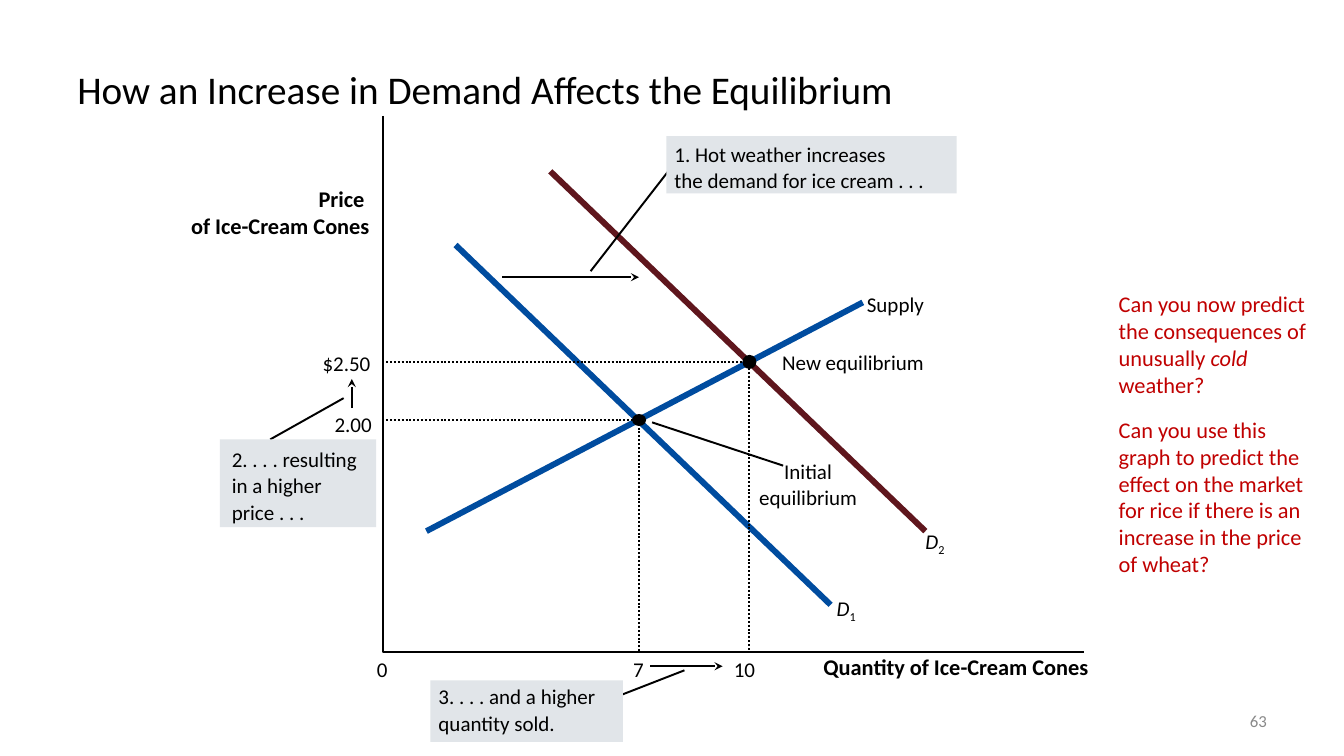
from dataclasses import dataclass

import pptx
import pptx.dml.color
import pptx.enum.dml
import pptx.enum.shapes
import pptx.enum.text
import pptx.oxml.ns
import pptx.util
from lxml import etree

Pt = pptx.util.Pt
ALIGN = pptx.enum.text.PP_ALIGN
ANCHOR = pptx.enum.text.MSO_ANCHOR
AUTO_SIZE = pptx.enum.text.MSO_AUTO_SIZE
SHAPE = pptx.enum.shapes.MSO_SHAPE
Point = tuple[float, float]

COLORS = {
    "ink": "000000",
    "blue": "004C9F",
    "maroon": "5F161D",
    "callout": "E1E5E9",
    "question": "C00000",
    "number": "898989",
}
FONT = "Calibri"
THIN, THICK = 1.38, 4.25
LINE_PITCH = 18.7
AXIS_X, AXIS_Y = 273.6, 465.8
GUIDE_X = 275.8


@dataclass(frozen=True)
class Segment:
    start: Point
    end: Point
    color: str = "ink"
    width: float = THIN
    arrow: bool = False


@dataclass(frozen=True)
class Callout:
    text: str
    left: float
    top: float
    width: float
    height: float
    inset_left: float
    inset_top: float


@dataclass(frozen=True)
class Equilibrium:
    x: float
    y: float
    dot_height: float


@dataclass(frozen=True)
class Label:
    text: str
    left: float
    top: float
    width: float
    height: float = 18
    size: float = 15
    bold: bool = False
    italic: bool = False
    align: ALIGN = ALIGN.LEFT
    color: str = "ink"
    subscript: str = ""


ARROWS = [
    Segment((358.6, 198), (456.5, 198), arrow=True),
    Segment((464.4, 475.9), (516.2, 475.9), arrow=True),
    Segment((251.3, 291.6), (251.3, 270.7), arrow=True),
]
CURVES = [
    Segment((616.3, 216), (304.6, 379.4), "blue", THICK),
    Segment((325.4, 175), (593.3, 432), "blue", THICK),
    Segment((393.1, 122.4), (661, 379.4), "maroon", THICK),
]
LEADERS = [
    Segment((465.8, 301.7), (559.4, 332.6)),
    Segment((488.9, 478.8), (433.4, 500.4)),
    Segment((193, 313.9), (245.5, 284.4)),
    Segment((421.9, 193.7), (487.4, 109.4)),
]
CALLOUTS = [
    Callout("1. Hot weather increases\vthe demand for ice cream . . .",
            475.9, 97.2, 207.4, 41, 5.8, 3.2),
    Callout("2. . . . resulting\vin a higher\vprice . . .",
            157, 313.9, 111.6, 62.6, 8.6, 4.5),
    Callout("3. . . . and a higher\vquantity sold.",
            307.4, 486, 137.5, 43.9, 5.8, 1.8),
]
EQUILIBRIA = [Equilibrium(456.5, 300, 8.6), Equilibrium(535.3, 258.5, 10)]
LABELS = [
    Label("0", 269.3, 468.7, 8),
    Label("7", 452.2, 468.7, 8),
    Label("10", 524.2, 468.7, 16),
    Label("2.00", 239, 293.8, 27),
    Label("$2.50", 230.4, 250.6, 35),
    Label("Supply", 619.2, 208.1, 42),
    Label("New equilibrium", 558.7, 249.8, 103),
    Label("Initial\vequilibrium", 541.7, 326.9, 71, 37.4, align=ALIGN.CENTER),
    Label("D", 597.6, 425.5, 16, italic=True, subscript="1"),
    Label("D", 661, 377.3, 16, italic=True, subscript="2"),
    Label("Price \vof Ice-Cream Cones", 134.6, 132.4, 129.4, 38.9, 16, True,
          align=ALIGN.RIGHT),
    Label("Quantity of Ice-Cream Cones", 588.2, 466.6, 192.2, 19.4, 16, True),
    Label("63", 688.3, 507.6, 216.7, 14.4, 12, align=ALIGN.RIGHT, color="number"),
]
QUESTIONS = [
    [("Can you now predict the consequences of unusually ", False),
     ("cold", True), (" weather?", False)],
    [("Can you use this graph to predict the effect on the market for rice "
      "if there is an increase in the price of wheat?", False)],
]


def rgb(name: str) -> pptx.dml.color.RGBColor:
    return pptx.dml.color.RGBColor.from_string(COLORS[name])


def apply(target, **values) -> None:
    for name, value in values.items():
        setattr(target, name, value)


def format_font(font, size: float, color: str = "ink", **values) -> None:
    apply(font, name=FONT, size=Pt(size), **values)
    font.color.rgb = rgb(color)


def format_frame(frame, left: float = 0, top: float = 0, wrap: bool = True,
                 anchor: ANCHOR = ANCHOR.TOP) -> None:
    apply(frame, margin_left=Pt(left), margin_top=Pt(top), margin_right=0,
          margin_bottom=0, word_wrap=wrap, vertical_anchor=anchor,
          auto_size=AUTO_SIZE.NONE if wrap else AUTO_SIZE.SHAPE_TO_FIT_TEXT)


def write_text(paragraph, text: str, align: ALIGN, size: float, color: str = "ink",
               **values) -> None:
    paragraph.text = text
    paragraph.alignment = align
    if "\v" in text and size == 15:
        paragraph.line_spacing = Pt(LINE_PITCH)
    for run in paragraph.runs:
        format_font(run.font, size, color, **values)


def draw_segment(shapes, segment: Segment) -> None:
    connector = shapes.add_connector(
        pptx.enum.shapes.MSO_CONNECTOR.STRAIGHT,
        *(Pt(value) for value in segment.start + segment.end))
    connector.line.color.rgb = rgb(segment.color)
    connector.line.width = Pt(segment.width)
    if segment.arrow:
        etree.SubElement(connector.line._get_or_add_ln(),
                         pptx.oxml.ns.qn("a:tailEnd"), type="stealth")
    etree.SubElement(connector._element.spPr, pptx.oxml.ns.qn("a:effectLst"))


def draw_outline(shapes, points: list[Point], dotted: bool = False) -> None:
    corners = [(Pt(x), Pt(y)) for x, y in points]
    builder = shapes.build_freeform(*corners[0])
    builder.add_line_segments(corners[1:], close=False)
    shape = builder.convert_to_shape()
    shape.shadow.inherit = False
    shape.fill.background()
    shape.line.color.rgb = rgb("ink")
    shape.line.width = Pt(THIN)
    if dotted:
        shape.line.dash_style = pptx.enum.dml.MSO_LINE.ROUND_DOT


def draw_solid(shapes, kind: SHAPE, color: str, *box: float):
    shape = shapes.add_shape(kind, *(Pt(value) for value in box))
    shape.shadow.inherit = False
    shape.fill.solid()
    shape.fill.fore_color.rgb = rgb(color)
    shape.line.fill.background()
    return shape


def draw_callout(shapes, callout: Callout) -> None:
    shape = draw_solid(shapes, SHAPE.RECTANGLE, "callout", callout.left,
                       callout.top, callout.width, callout.height)
    format_frame(shape.text_frame, callout.inset_left, callout.inset_top)
    write_text(shape.text_frame.paragraphs[0], callout.text, ALIGN.LEFT, 15)


def draw_equilibrium(shapes, point: Equilibrium) -> None:
    draw_outline(shapes, [(GUIDE_X, point.y), (point.x, point.y),
                          (point.x, AXIS_Y)], dotted=True)
    draw_solid(shapes, SHAPE.OVAL, "ink", point.x - 5,
               point.y - point.dot_height / 2, 10, point.dot_height)


def draw_label(shapes, label: Label) -> None:
    box = (label.left, label.top, label.width, label.height)
    frame = shapes.add_textbox(*(Pt(value) for value in box)).text_frame
    format_frame(frame, wrap=label.align == ALIGN.RIGHT)
    paragraph = frame.paragraphs[0]
    write_text(paragraph, label.text, label.align, label.size, label.color,
               bold=label.bold, italic=label.italic)
    if label.subscript:
        run = paragraph.add_run()
        run.text = label.subscript
        format_font(run.font, label.size)
        run.font._element.set("baseline", "-25000")


def draw_questions(shapes) -> None:
    frame = shapes.add_textbox(Pt(792), Pt(203.8), Pt(149.8), Pt(214)).text_frame
    format_frame(frame, 7.2, 3.6)
    for index, parts in enumerate(QUESTIONS):
        paragraph = frame.add_paragraph() if index else frame.paragraphs[0]
        paragraph.space_before = Pt(13 if index else 0)
        for text, italic in parts:
            run = paragraph.add_run()
            run.text = text
            format_font(run.font, 16, "question", italic=italic)


def draw_title(title) -> None:
    apply(title, left=Pt(48), top=Pt(21.6), width=Pt(864), height=Pt(90))
    format_frame(title.text_frame, 7.2, anchor=ANCHOR.MIDDLE)
    paragraph = title.text_frame.paragraphs[0]
    write_text(paragraph, "How an Increase in Demand Affects the Equilibrium",
               ALIGN.LEFT, 28)
    paragraph.line_spacing = 0.8


def main() -> None:
    presentation = pptx.Presentation()
    apply(presentation, slide_width=Pt(960), slide_height=Pt(540))
    slide = presentation.slides.add_slide(presentation.slide_layouts[5])
    shapes = slide.shapes
    draw_title(shapes.title)
    draw_outline(shapes, [(AXIS_X, 82.8), (AXIS_X, AXIS_Y), (774, AXIS_Y)])
    for segment in ARROWS + CURVES + LEADERS:
        draw_segment(shapes, segment)
    for callout in CALLOUTS:
        draw_callout(shapes, callout)
    for point in EQUILIBRIA:
        draw_equilibrium(shapes, point)
    for label in LABELS:
        draw_label(shapes, label)
    draw_questions(shapes)
    presentation.save("out.pptx")


if __name__ == "__main__":
    main()
